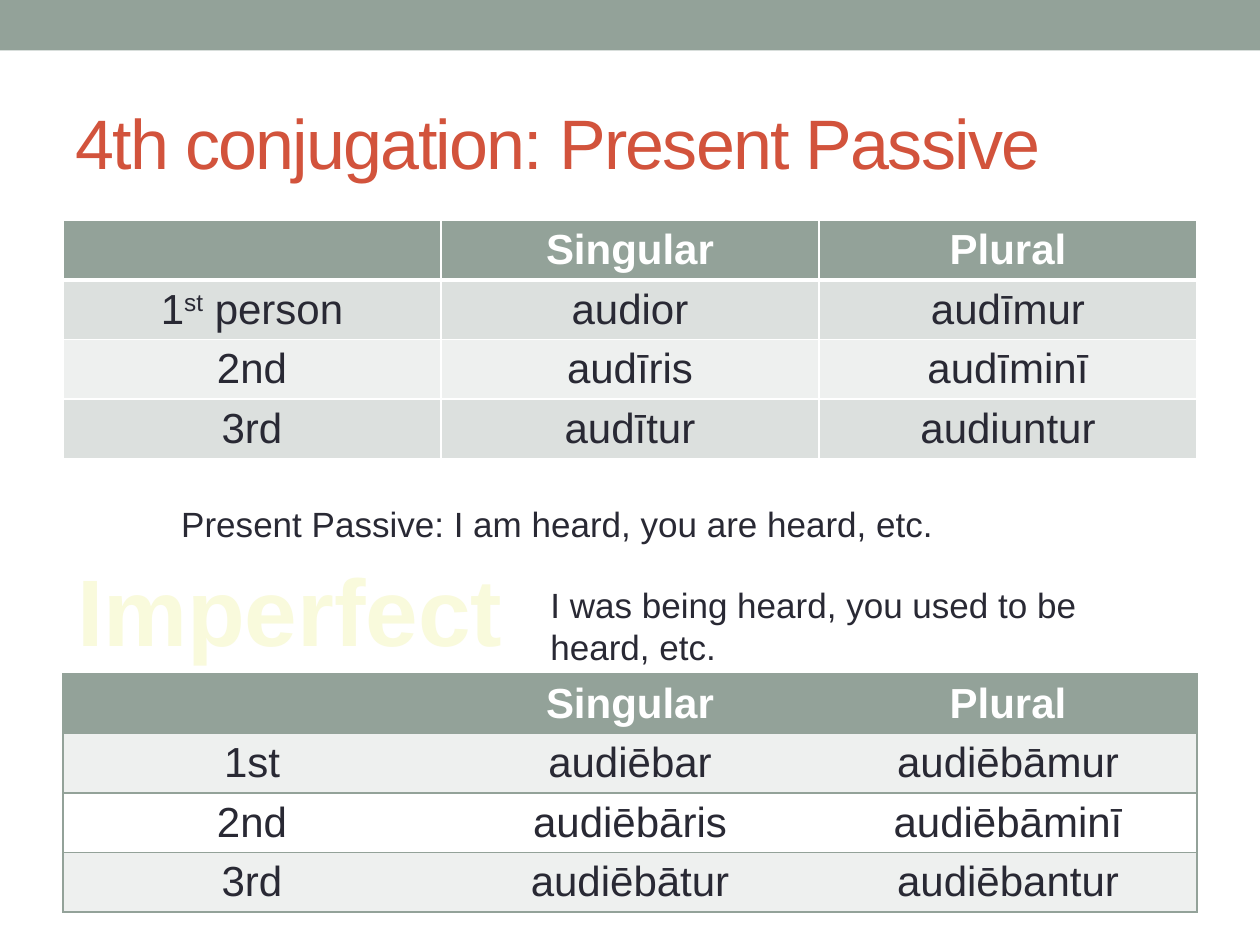
import pptx
import pptx.util
import pptx.dml.color
import pptx.enum.shapes
import pptx.enum.text
import pptx.oxml
import pptx.oxml.ns
import lxml.etree

Inches = pptx.util.Inches
RGBColor = pptx.dml.color.RGBColor
Align = pptx.enum.text.PP_ALIGN
Anchor = pptx.enum.text.MSO_ANCHOR

SAGE = RGBColor(0x93, 0xA2, 0x99)
BRICK = RGBColor(0xD2, 0x53, 0x3C)
INK = RGBColor(0x29, 0x29, 0x34)
WHITE = RGBColor(0xFF, 0xFF, 0xFF)
GREY = RGBColor(0xDC, 0xE0, 0xDE)
PALE = RGBColor(0xEE, 0xF0, 0xEF)
CREAM = RGBColor(0xF9, 0xFA, 0xDC)

MARGIN = 0.5
COLUMN = 3
ROW = 0.47


def write(para, text, size, color, bold=False):
    span = para.add_run()
    span.text = text
    values = {"name": "Arial", "size": pptx.util.Pt(size), "bold": bold}
    for name, value in values.items():
        setattr(span.font, name, value)
    span.font.color.rgb = color
    return span


def draw_border(cell, side, color, points):
    line = lxml.etree.Element(pptx.oxml.ns.qn("a:ln" + side), w=str(int(pptx.util.Pt(points))))
    if color is None:
        lxml.etree.SubElement(line, pptx.oxml.ns.qn("a:noFill"))
    else:
        fill = lxml.etree.SubElement(line, pptx.oxml.ns.qn("a:solidFill"))
        lxml.etree.SubElement(fill, pptx.oxml.ns.qn("a:srgbClr"), val=str(color))
    properties = cell._tc.get_or_add_tcPr()
    properties.insert("LRTB".index(side), line)


deck = pptx.Presentation()
deck.slide_width = Inches(10)
deck.slide_height = Inches(7.5)
page = deck.slides.add_slide(deck.slide_layouts[5])

band = page.shapes.add_shape(
    pptx.enum.shapes.MSO_SHAPE.RECTANGLE, 0, 0, deck.slide_width, Inches(0.4))
band.shadow.inherit = False
band.fill.solid()
band.fill.fore_color.rgb = SAGE
band.line.fill.background()

title = page.shapes.title
place = {"left": MARGIN, "top": 0.58, "width": 3 * COLUMN, "height": 1.08}
for name, value in place.items():
    setattr(title, name, Inches(value))
title.text_frame.vertical_anchor = Anchor.MIDDLE
heading = title.text_frame.paragraphs[0]
heading.alignment = Align.LEFT
span = write(heading, "4th conjugation: Present Passive", 40, BRICK)
span.font._element.set("spc", "-100")

present = {
    "top": 1.75, "border": WHITE, "grid": WHITE, "header_rule": 3, "bands": (GREY, PALE),
    "rows": [
        ("", "Singular", "Plural"),
        ("1st person", "audior", "audīmur"),
        ("2nd", "audīris", "audīminī"),
        ("3rd", "audītur", "audiuntur"),
    ],
}
imperfect = {
    "top": 5.35, "border": SAGE, "grid": None, "header_rule": 1, "bands": (PALE, WHITE),
    "rows": [
        ("", "Singular", "Plural"),
        ("1st", "audiēbar", "audiēbāmur"),
        ("2nd", "audiēbāris", "audiēbāminī"),
        ("3rd", "audiēbātur", "audiēbantur"),
    ],
}

for tense in (present, imperfect):
    rows = tense["rows"]
    table = page.shapes.add_table(
        len(rows), 3, Inches(MARGIN), Inches(tense["top"]),
        Inches(3 * COLUMN), Inches(len(rows) * ROW)).table
    for row, words in enumerate(rows):
        for column, word in enumerate(words):
            cell = table.cell(row, column)
            header = row == 0
            cell.fill.solid()
            cell.fill.fore_color.rgb = SAGE if header else tense["bands"][(row - 1) % 2]
            draw_border(cell, "L", tense["border"] if column == 0 else tense["grid"], 1)
            draw_border(cell, "R", tense["border"] if column == 2 else tense["grid"], 1)
            draw_border(cell, "T", tense["border"], tense["header_rule"] if row == 1 else 1)
            draw_border(cell, "B", tense["border"], tense["header_rule"] if header else 1)
            para = cell.text_frame.paragraphs[0]
            para.alignment = Align.CENTER
            if word == "1st person":
                write(para, "1", 24, INK)
                write(para, "st", 24, INK).font._element.set("baseline", "30000")
                write(para, " person", 24, INK)
            elif word:
                write(para, word, 24, WHITE if header else INK, header)

captions = [
    ("Present Passive: I am heard, you are heard, etc.", (1.34, 3.94, 7.97, 0.44), 20, INK, False, Align.LEFT),
    ("I was being heard, you used to be heard, etc.", (4.27, 4.58, 5.23, 0.77), 20, INK, False, Align.LEFT),
    ("Imperfect", (0.5, 4.33, 3.6, 0.92), 54, CREAM, True, Align.CENTER),
]
for text, place, size, color, bold, alignment in captions:
    box = page.shapes.add_textbox(*map(Inches, place))
    box.text_frame.word_wrap = True
    para = box.text_frame.paragraphs[0]
    para.alignment = alignment
    write(para, text, size, color, bold)

deck.save("out.pptx")
